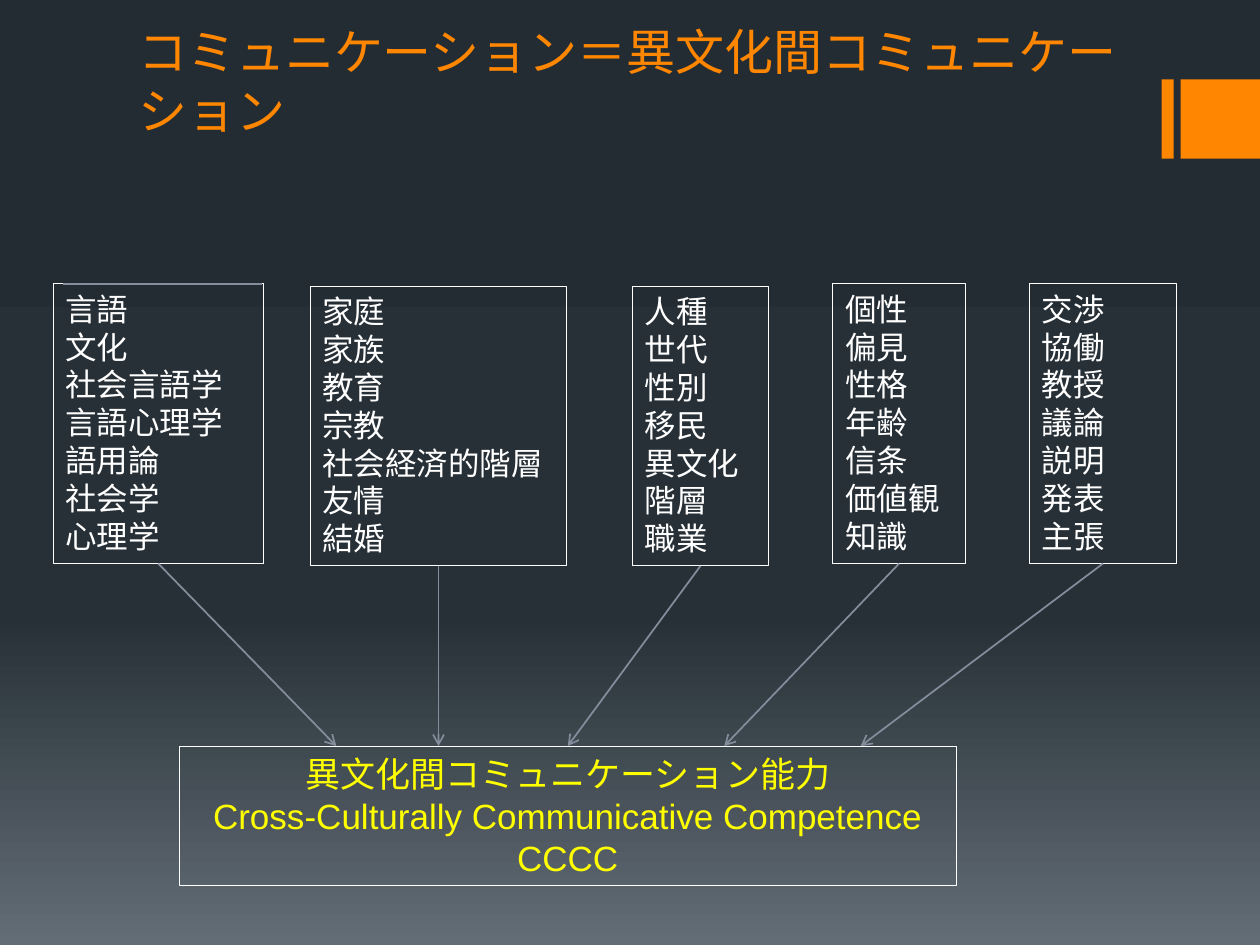
from copy import deepcopy
from dataclasses import dataclass

from pptx import Presentation
from pptx.dml.color import RGBColor
from pptx.enum.shapes import MSO_CONNECTOR, MSO_SHAPE
from pptx.enum.text import MSO_ANCHOR, MSO_AUTO_SIZE, PP_ALIGN
from pptx.oxml.ns import qn
from pptx.util import Cm, Pt
from lxml import etree

STRAIGHT = MSO_CONNECTOR.STRAIGHT
RECT = MSO_SHAPE.RECTANGLE
BOTTOM, TOP = MSO_ANCHOR.BOTTOM, MSO_ANCHOR.TOP
LEFT, CENTER = PP_ALIGN.LEFT, PP_ALIGN.CENTER
FIT_SHAPE = MSO_AUTO_SIZE.SHAPE_TO_FIT_TEXT
SIDE_TOP, SIDE_BOTTOM = 0, 2


@dataclass(frozen=True)
class Theme:
    font: str = "Arial"
    accent: str = "FF8600"
    text: str = "FFFFFF"
    highlight: str = "FFFF00"
    arrow: str = "838D9B"
    background: tuple = ((0, "242C33"), (0.65, "273037"), (1, "636D76"))
    title_size: int = 28
    list_size: int = 18
    result_size: int = 20
    border_width: float = 0.5
    arrow_width: float = 1


class SlideBuilder:
    def __init__(self, s, theme):
        self.s = s
        self.theme = theme

    def background(self):
        fill = self.s.background.fill
        fill.gradient()
        fill.gradient_angle = 270
        stop_list = next(self.s.element.iter(qn("a:gsLst")))
        stop_list.insert(1, deepcopy(stop_list[0]))
        for stop, (position, color) in zip(fill.gradient_stops, self.theme.background):
            stop.position = position
            stop.color.rgb = RGBColor.from_string(color)

    def bar(self, x, y, w, h):
        sp = self.s.shapes.add_shape(RECT, Cm(x), Cm(y), Cm(w), Cm(h))
        sp.shadow.inherit = False
        sp.fill.solid()
        sp.fill.fore_color.rgb = RGBColor.from_string(self.theme.accent)
        sp.line.fill.background()

    def text(self, lines, x, y, w, h, size, color, align=LEFT, anchor=TOP):
        sp = self.s.shapes.add_textbox(Cm(x), Cm(y), Cm(w), Cm(h))
        tf = sp.text_frame
        tf.word_wrap = True
        tf.vertical_anchor = anchor
        tf.text = "\n".join(lines)
        for p in tf.paragraphs:
            p.alignment = align
            p.font.name = self.theme.font
            p.font.size = Pt(size)
            p.font.color.rgb = RGBColor.from_string(color)
        return sp

    def framed_text(self, *args, **kwargs):
        sp = self.text(*args, **kwargs)
        sp.text_frame.auto_size = FIT_SHAPE
        sp.line.color.rgb = RGBColor.from_string(self.theme.text)
        sp.line.width = Pt(self.theme.border_width)
        return sp

    def line(self, x1, y1, x2, y2):
        cxn = self.s.shapes.add_connector(STRAIGHT, Cm(x1), Cm(y1), Cm(x2), Cm(y2))
        cxn.line.color.rgb = RGBColor.from_string(self.theme.arrow)
        cxn.line.width = Pt(self.theme.arrow_width)
        etree.SubElement(cxn.element.spPr, qn("a:effectLst"))
        return cxn

    def arrow(self, source, target, x2):
        """Arrow from the bottom of source to x2 on the top edge of target."""
        y2 = target.top.cm
        cxn = self.line(x2, y2, x2, y2)
        cxn.begin_connect(source, SIDE_BOTTOM)
        if abs(x2 - target.left.cm - target.width.cm / 2) < 0.05:
            cxn.end_connect(target, SIDE_TOP)
        etree.SubElement(cxn.line._get_or_add_ln(), qn("a:tailEnd"), type="arrow")


# left, top, width, arrow end, topics
TOPIC_BOXES = [
    (1.07, 5.72, 4.24, 6.78,
     ["言語", "文化", "社会言語学", "言語心理学", "語用論", "社会学", "心理学"]),
    (6.25, 5.77, 5.18, 8.84,
     ["家庭", "家族", "教育", "宗教", "社会経済的階層", "友情", "結婚"]),
    (12.75, 5.77, 2.74, 11.43,
     ["人種", "世代", "性別", "移民", "異文化", "階層", "職業"]),
    (16.79, 5.72, 2.67, 14.6,
     ["個性", "偏見", "性格", "年齢", "信条", "価値観", "知識"]),
    (20.75, 5.72, 2.97, 17.35,
     ["交渉", "協働", "教授", "議論", "説明", "発表", "主張"]),
]
TOPIC_HEIGHT = 5.64
RESULT = ["異文化間コミュニケーション能力",
          "Cross-Culturally Communicative Competence", "CCCC"]


def main():
    prs = Presentation()
    prs.slide_width, prs.slide_height = Cm(25.4), Cm(19.05)
    theme = Theme()
    b = SlideBuilder(prs.slides.add_slide(prs.slide_layouts[6]), theme)

    b.background()
    for x, w in ((23.42, 0.24), (23.8, 1.6)):
        b.bar(x, 1.6, w, 1.6)
    b.text(["コミュニケーション＝異文化間コミュニケーション"], 2.54, 1.47, 20.32, 1.47,
           theme.title_size, theme.accent, anchor=BOTTOM)

    topics = [b.framed_text(lines, x, y, w, TOPIC_HEIGHT, theme.list_size, theme.text)
              for x, y, w, _, lines in TOPIC_BOXES]
    result = b.framed_text(RESULT, 3.61, 15.04, 15.67, 2.82,
                           theme.result_size, theme.highlight, align=CENTER)

    b.line(1.27, 5.72, 5.28, 5.72)
    for topic, (_, _, _, arrow_end, _) in zip(topics, TOPIC_BOXES):
        b.arrow(topic, result, arrow_end)

    prs.save("out.pptx")


if __name__ == "__main__":
    main()
